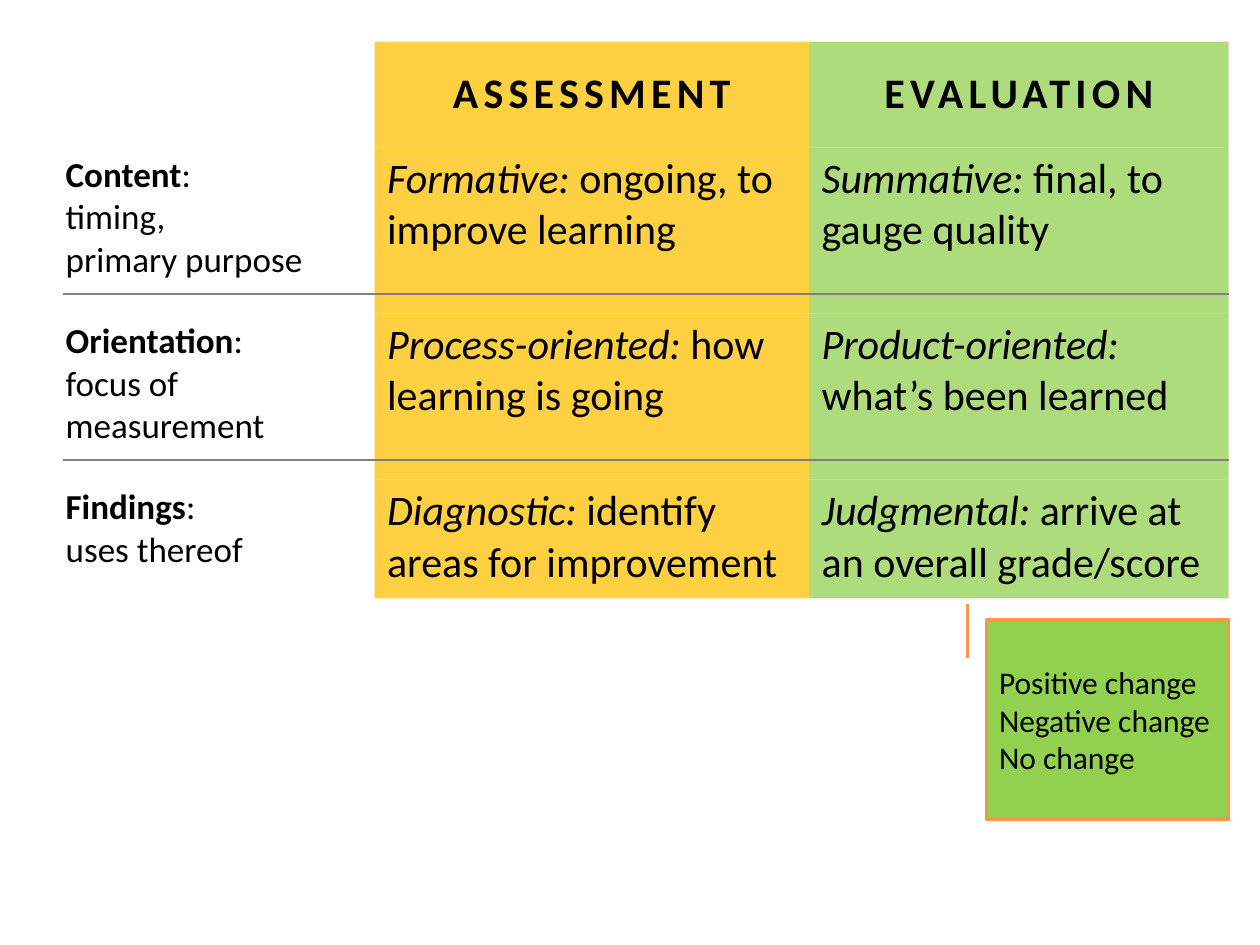
"""Build a slide that compares assessment with evaluation in a table."""
from dataclasses import dataclass

from lxml import etree
from pptx import Presentation
from pptx.dml.color import RGBColor
from pptx.enum import shapes, text
from pptx.oxml.ns import qn
from pptx.util import Cm, Pt


@dataclass(frozen=True)
class Theme:
    """Colours, font and type sizes of the slide."""
    font: str = "Calibri"
    ink: str = "000000"
    assessment: str = "FFC000"
    evaluation: str = "92D050"
    rule: str = "808080"
    accent: str = "F79646"
    column_opacity: int = 74
    main_size: int = 24
    label_size: int = 20
    callout_size: int = 18
    heading_spacing: int = 3


THEME = Theme()
HEADINGS = ["ASSESSMENT", "EVALUATION"]
ROWS = [
    (("Content", ["timing,", "primary purpose"]),
     ("Formative:", " ongoing, to improve learning"),
     ("Summative:", " final, to gauge quality")),
    (("Orientation", ["focus of measurement"]),
     ("Process-oriented:", " how learning is going"),
     ("Product-oriented:", " what’s been learned")),
    (("Findings", ["uses thereof"]),
     ("Diagnostic:", " identify areas for improvement"),
     ("Judgmental:", " arrive at an overall grade/score")),
]
CHANGES = ["Positive change", "Negative change", "No change"]

TABLE_LEFT, TABLE_TOP = 1.07, 0.84
COLUMN_WIDTHS = [6.48, 8.76, 8.46]
ROW_HEIGHTS = [2.13, 3.35, 3.35, 2.39]
RULE_LEFT, RULE_RISE = 1.27, 0.4
CALLOUT_TOP, CALLOUT_WIDTH, CALLOUT_HEIGHT = 12.5, 4.88, 4.01
CALLOUT_POINTS = [0.19, -0.08, -0.08, -0.08]
PLAIN_TABLE_STYLE = "{2D5ABB26-0587-4C30-8999-92F81FD0307C}"


def write(paragraph, words, size, bold=False, italic=False, spacing=0, align=text.PP_ALIGN.LEFT):
    """Add one formatted run to a paragraph."""
    paragraph.alignment = align
    run = paragraph.add_run()
    run.text = words
    run.font.name = THEME.font
    run.font.size = Pt(size)
    run.font.bold, run.font.italic = bold, italic
    run.font.color.rgb = RGBColor.from_string(THEME.ink)
    if spacing:
        run.font._element.set("spc", str(spacing * 100))


def fill_column_cell(cell, colour):
    """Give a cell a translucent fill."""
    cell.fill.solid()
    cell.fill.fore_color.rgb = RGBColor.from_string(colour)
    colour_element = next(cell._tc.iter(qn("a:srgbClr")))
    etree.SubElement(colour_element, qn("a:alpha")).set("val", str(THEME.column_opacity * 1000))


def add_comparison(slide):
    """Add the table with its headings, labels and entries."""
    frame = slide.shapes.add_table(
        len(ROW_HEIGHTS), len(COLUMN_WIDTHS), Cm(TABLE_LEFT), Cm(TABLE_TOP),
        Cm(sum(COLUMN_WIDTHS)), Cm(sum(ROW_HEIGHTS)))
    table = frame.table
    table.first_row = table.horz_banding = False
    next(table._tbl.iter(qn("a:tableStyleId"))).text = PLAIN_TABLE_STYLE
    for column, width in zip(table.columns, COLUMN_WIDTHS):
        column.width = Cm(width)
    for row, height in zip(table.rows, ROW_HEIGHTS):
        row.height = Cm(height)
        row.cells[0].fill.background()
        for cell, colour in zip(list(row.cells)[1:], [THEME.assessment, THEME.evaluation]):
            fill_column_cell(cell, colour)

    for index, heading in enumerate(HEADINGS, 1):
        cell = table.cell(0, index)
        cell.vertical_anchor = text.MSO_ANCHOR.MIDDLE
        write(cell.text_frame.paragraphs[0], heading, THEME.main_size, bold=True,
              spacing=THEME.heading_spacing, align=text.PP_ALIGN.CENTER)

    for row_index, ((label, details), *entries) in enumerate(ROWS, 1):
        label_frame = table.cell(row_index, 0).text_frame
        write(label_frame.paragraphs[0], label, THEME.label_size, bold=True)
        write(label_frame.paragraphs[0], ":", THEME.label_size)
        for detail in details:
            write(label_frame.add_paragraph(), detail, THEME.label_size)
        for column_index, (term, meaning) in enumerate(entries, 1):
            paragraph = table.cell(row_index, column_index).text_frame.paragraphs[0]
            write(paragraph, term, THEME.main_size, italic=True)
            write(paragraph, meaning, THEME.main_size)


def add_callout(slide, right):
    """Add the callout that lists the possible changes."""
    callout = slide.shapes.add_shape(
        shapes.MSO_SHAPE.LINE_CALLOUT_1, Cm(right - CALLOUT_WIDTH), Cm(CALLOUT_TOP),
        Cm(CALLOUT_WIDTH), Cm(CALLOUT_HEIGHT))
    callout.shadow.inherit = False
    for index, value in enumerate(CALLOUT_POINTS):
        callout.adjustments[index] = value
    callout.fill.solid()
    callout.fill.fore_color.rgb = RGBColor.from_string(THEME.evaluation)
    callout.line.color.rgb = RGBColor.from_string(THEME.accent)
    callout.line.width = Pt(2)
    frame = callout.text_frame
    frame.word_wrap = True
    frame.vertical_anchor = text.MSO_ANCHOR.MIDDLE
    for index, change in enumerate(CHANGES):
        paragraph = frame.add_paragraph() if index else frame.paragraphs[0]
        write(paragraph, change, THEME.callout_size)


def add_rule(slide, top, right):
    """Add a thin horizontal rule."""
    rule = slide.shapes.add_connector(
        shapes.MSO_CONNECTOR.STRAIGHT, Cm(RULE_LEFT), Cm(top), Cm(right), Cm(top))
    rule.line.color.rgb = RGBColor.from_string(THEME.rule)
    rule.line.width = Pt(1.25)
    etree.SubElement(rule._element.spPr, qn("a:effectLst"))


def main():
    """Build and save the presentation."""
    presentation = Presentation()
    presentation.slide_width, presentation.slide_height = Cm(25.4), Cm(19.05)
    slide = presentation.slides.add_slide(presentation.slide_layouts[6])
    right = TABLE_LEFT + sum(COLUMN_WIDTHS)
    add_comparison(slide)
    add_callout(slide, right)
    for row_count in (2, 3):
        add_rule(slide, TABLE_TOP + sum(ROW_HEIGHTS[:row_count]) - RULE_RISE, right)
    presentation.save("out.pptx")


if __name__ == "__main__":
    main()
